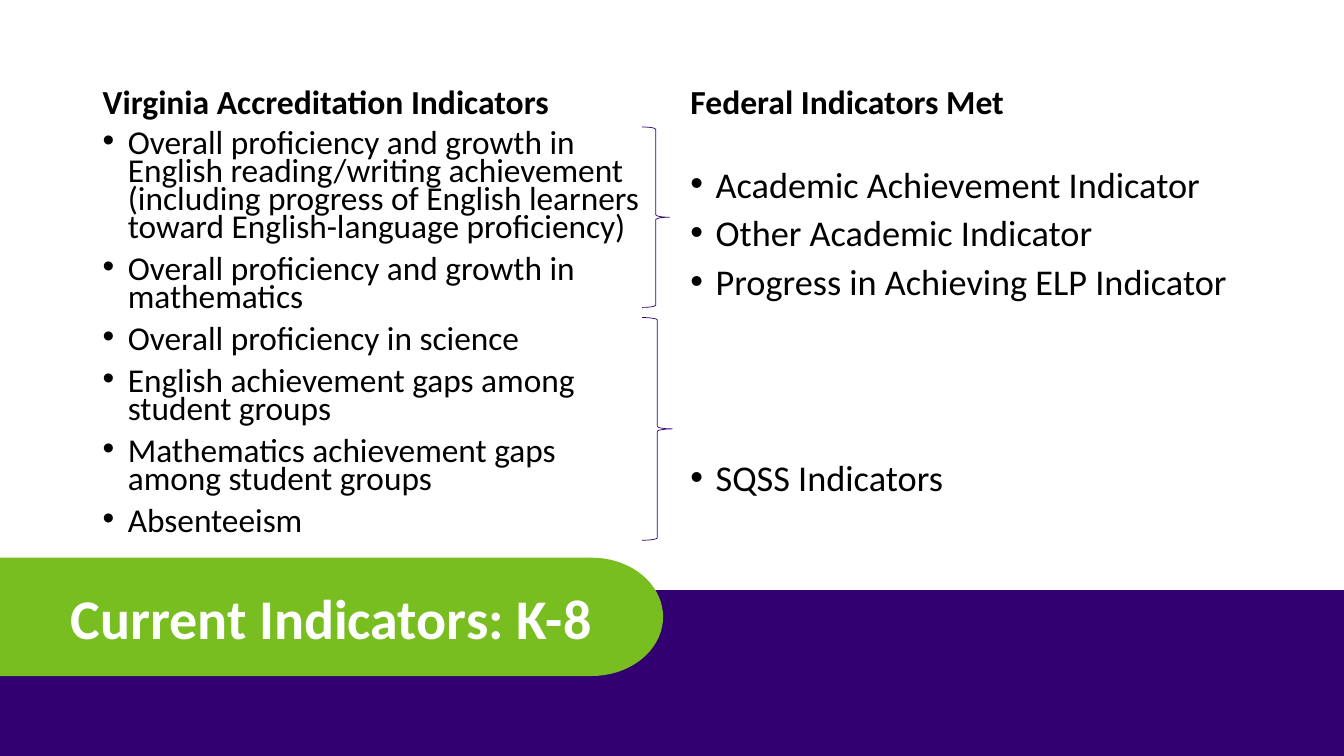
"""Build the slide that pairs state accreditation indicators with federal ones."""
import math

import pptx
import pptx.dml.color
import pptx.enum.shapes
import pptx.enum.text
import pptx.oxml.ns
import pptx.util
from lxml import etree

Inches = pptx.util.Inches
Pt = pptx.util.Pt
Anchor = pptx.enum.text.MSO_ANCHOR
Shape = pptx.enum.shapes.MSO_SHAPE


def colour(code):
    return pptx.dml.color.RGBColor.from_string(code)


class IndicatorSlide:
    font = "Calibri"
    purple, green, black, white = "330072", "78BE20", "000000", "FFFFFF"

    def __init__(self, page):
        self.page = page

    def paint(self, shape, line, width, fill=None):
        shape.shadow.inherit = False
        if fill:
            shape.fill.solid()
            shape.fill.fore_color.rgb = colour(fill)
        else:
            shape.fill.background()
        shape.line.color.rgb = colour(line)
        shape.line.width = Pt(width)

    def preset(self, kind, area, width, fill=None):
        shape = self.page.shapes.add_shape(kind, *map(Inches, area))
        self.paint(shape, self.purple, width, fill)

    def banner(self, top, bottom, bend, radius):
        middle, half = (top + bottom) / 2, (bottom - top) / 2
        angles = [math.radians(step) for step in range(-90, 91, 5)]
        curve = [(bend + radius * math.cos(angle), middle + half * math.sin(angle))
                 for angle in angles]
        outline = [(Inches(x), Inches(y)) for x, y in curve + [(0, bottom)]]
        builder = self.page.shapes.build_freeform(0, Inches(top))
        builder.add_line_segments(outline, close=True)
        self.paint(builder.convert_to_shape(), self.green, 1, self.green)

    def style(self, para, size, code, bold=False):
        for span in para.runs:
            span.font.name = self.font
            span.font.size = Pt(size)
            span.font.bold = bold
            span.font.color.rgb = colour(code)

    def title(self, text, area):
        box = self.page.shapes.title
        box.left, box.top, box.width, box.height = map(Inches, area)
        box.element.getparent().append(box.element)
        frame = box.text_frame
        frame.text = text
        frame.vertical_anchor = Anchor.MIDDLE
        frame.auto_size = pptx.enum.text.MSO_AUTO_SIZE.NONE
        frame.paragraphs[0].alignment = pptx.enum.text.PP_ALIGN.CENTER
        self.style(frame.paragraphs[0], 40, self.white, True)

    def text_box(self, text, area, size, spacing, anchor=Anchor.TOP, bold=False):
        frame = self.page.shapes.add_textbox(*map(Inches, area)).text_frame
        frame.word_wrap = True
        frame.vertical_anchor = anchor
        frame.text = text
        for para in frame.paragraphs:
            para.line_spacing = spacing
            para.space_before = Pt(10)
            self.style(para, size, self.black, bold)
        return frame.paragraphs

    def heading(self, text, area):
        self.text_box(text, area, 24, 0.9, Anchor.BOTTOM, True)

    def bullets(self, items, area, size, spacing):
        paragraphs = self.text_box("\n".join(items), area, size, spacing)
        for para in paragraphs:
            properties = para._p.get_or_add_pPr()
            properties.set("marL", str(Inches(0.25)))
            properties.set("indent", str(Inches(-0.25)))
            font = etree.SubElement(properties, pptx.oxml.ns.qn("a:buFont"))
            font.set("typeface", "Arial")
            mark = etree.SubElement(properties, pptx.oxml.ns.qn("a:buChar"))
            mark.set("char", "•")
        return paragraphs


def main():
    deck = pptx.Presentation()
    deck.slide_width, deck.slide_height = Inches(13.33), Inches(7.5)
    slide = IndicatorSlide(deck.slides.add_slide(deck.slide_layouts[5]))

    slide.preset(Shape.RECTANGLE, (0, 5.86, 13.33, 1.64), 1, slide.purple)
    slide.banner(5.54, 6.7, 5.87, 0.7)
    slide.title("Current Indicators: K-8", (0, 5.54, 6.57, 1.17))

    slide.heading("Virginia Accreditation Indicators", (0.92, 0.36, 5.64, 0.9))
    slide.bullets([
        "Overall proficiency and growth in English reading/writing achievement "
        "(including progress of English learners toward English-language proficiency)",
        "Overall proficiency and growth in mathematics",
        "Overall proficiency in science",
        "English achievement gaps among student groups",
        "Mathematics achievement gaps among student groups",
        "Absenteeism",
    ], (0.92, 1.26, 5.64, 4.41), 23.8, 0.7)

    slide.heading("Federal Indicators Met", (6.75, 0.36, 5.67, 0.9))
    federal = slide.bullets([
        "Academic Achievement Indicator",
        "Other Academic Indicator",
        "Progress in Achieving ELP Indicator",
        "SQSS Indicators",
    ], (6.75, 1.64, 5.67, 3.54), 25.9, 0.8)
    federal[-1].space_before = Pt(115)

    for area in ((6.37, 1.26, 0.27, 1.79), (6.37, 3.15, 0.3, 2.21)):
        slide.preset(Shape.RIGHT_BRACE, area, 0.5)

    deck.save("out.pptx")


if __name__ == "__main__":
    main()
